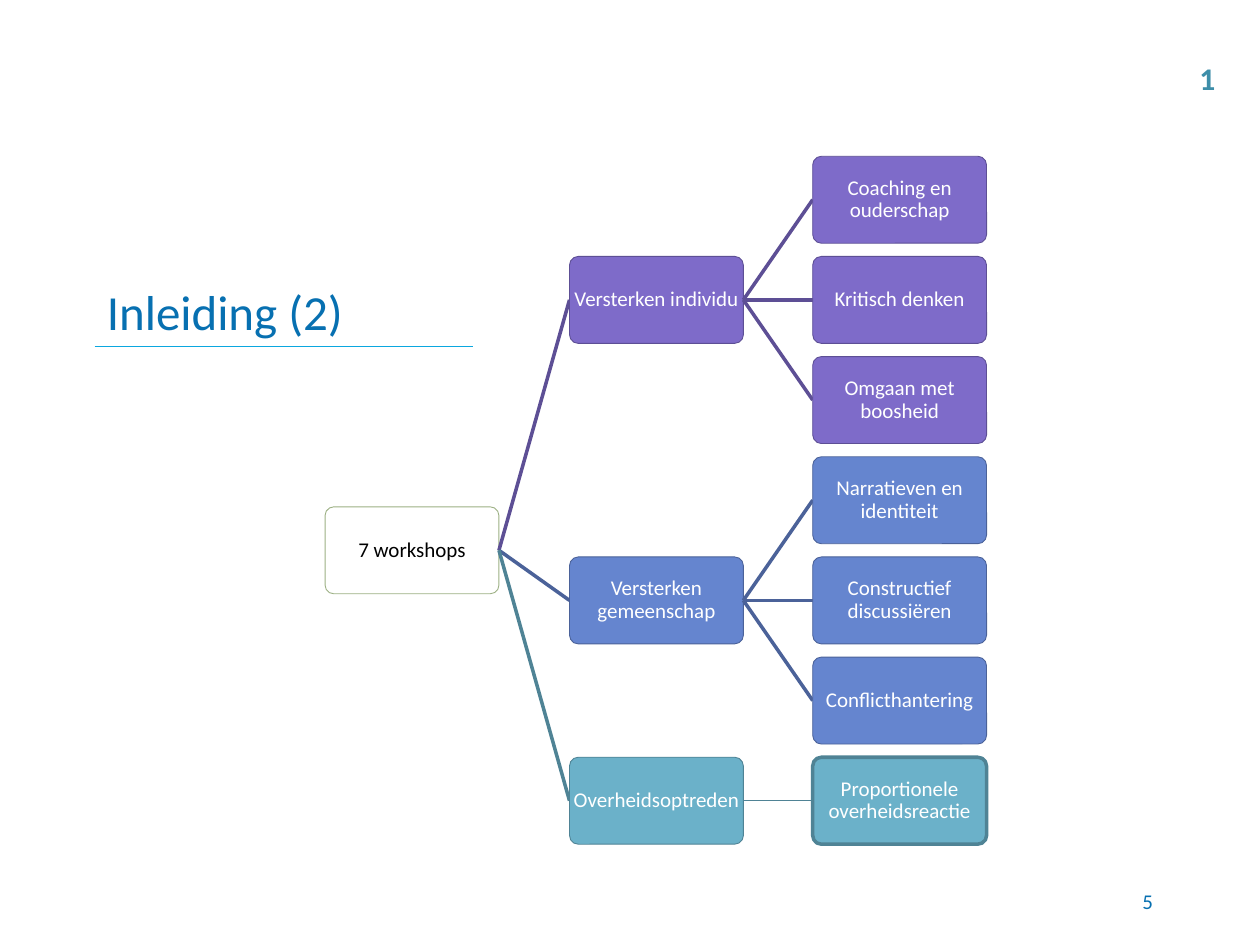
"""Build a slide with a three-level tree of the seven workshops."""
from pptx import Presentation
from pptx.dml.color import RGBColor
from pptx.enum.shapes import MSO_CONNECTOR as Connector, MSO_SHAPE as Shape
from pptx.enum.text import MSO_ANCHOR as Anchor, PP_ALIGN as Align
from pptx.oxml.ns import qn
from pptx.util import Inches, Pt
from lxml.etree import SubElement

WHITE = RGBColor(0xFF, 0xFF, 0xFF)
BLACK = RGBColor(0x00, 0x00, 0x00)
BLUE = RGBColor(0x07, 0x70, 0xB1)
SKY = RGBColor(0x0B, 0xA7, 0xDF)
TEAL = RGBColor(0x3E, 0x8E, 0xA9)
OLIVE = RGBColor(0x9C, 0xB0, 0x84)
PURPLE = RGBColor(0x7E, 0x6B, 0xC9)
PURPLE_DARK = RGBColor(0x5D, 0x4F, 0x95)
INDIGO = RGBColor(0x65, 0x85, 0xCF)
INDIGO_DARK = RGBColor(0x4B, 0x62, 0x99)
AQUA = RGBColor(0x6B, 0xB1, 0xC9)
AQUA_DARK = RGBColor(0x4F, 0x83, 0x95)

COLUMNS = (2.58, 4.52, 6.45)
FIRST_TOP, LAST_TOP, LAST_ROW = 1.24, 6.01, 6
NODE_WIDTH, NODE_HEIGHT = 1.38, 0.69
NODE_MARGIN = 0.01
THIN, THICK = 0.5, 2

BRANCHES = (
    ("Versterken individu", PURPLE, PURPLE_DARK,
     ("Coaching en ouderschap", "Kritisch denken", "Omgaan met boosheid")),
    ("Versterken gemeenschap", INDIGO, INDIGO_DARK,
     ("Narratieven en identiteit", "Constructief discussiëren", "Conflicthantering")),
    ("Overheidsoptreden", AQUA, AQUA_DARK, ("Proportionele overheidsreactie",)),
)


def apply_format(target, values):
    """Set each named attribute on the target."""
    for name, value in values.items():
        setattr(target, name, value)


def write_text(shape, text, color, font, frame, para=None):
    """Put one formatted paragraph in a shape."""
    apply_format(shape.text_frame, frame)
    paragraph = shape.text_frame.paragraphs[0]
    apply_format(paragraph, para or {})
    span = paragraph.add_run()
    span.text = text
    apply_format(span.font, {"name": "Calibri", **font})
    span.font.color.rgb = color


def add_label(page, place, text, color, font, frame, para=None):
    """Add a text box at left, top, width and height."""
    box = page.shapes.add_textbox(*map(Inches, place))
    write_text(box, text, color, font, frame, para)


def add_line(page, start, end, color, width):
    """Add a straight line without a shadow."""
    line = page.shapes.add_connector(Connector.STRAIGHT, *map(Inches, (*start, *end)))
    line.line.color.rgb = color
    line.line.width = Pt(width)
    SubElement(line._element.spPr, qn("a:effectLst"))


def row_top(row):
    """Return the top of a tree row, which may be fractional."""
    return FIRST_TOP + row * (LAST_TOP - FIRST_TOP) / LAST_ROW


def add_node(page, level, row, text, fill, outline, color=WHITE, width=THIN):
    """Add a rounded tree node with centred text."""
    place = (COLUMNS[level], row_top(row), NODE_WIDTH, NODE_HEIGHT)
    node = page.shapes.add_shape(Shape.ROUNDED_RECTANGLE, *map(Inches, place))
    node.adjustments[0] = 0.1
    node.shadow.inherit = False
    node.fill.solid()
    node.fill.fore_color.rgb = fill
    node.line.color.rgb = outline
    node.line.width = Pt(width)
    margins = {f"margin_{side}": Inches(NODE_MARGIN)
               for side in ("left", "top", "right", "bottom")}
    write_text(node, text, color, {"size": Pt(12)},
               {"word_wrap": True, "vertical_anchor": Anchor.MIDDLE, **margins},
               {"alignment": Align.CENTER, "line_spacing": 0.9})


def add_link(page, level, parent_row, child_row, color, width=THICK):
    """Join a parent node to a child node in the next column."""
    start = (COLUMNS[level] + NODE_WIDTH, row_top(parent_row) + NODE_HEIGHT / 2)
    end = (COLUMNS[level + 1], row_top(child_row) + NODE_HEIGHT / 2)
    add_line(page, start, end, color, width)


def add_tree(page):
    """Draw the workshops, their branches and the root."""
    branch_rows = []
    first = 0
    for *_, workshops in BRANCHES:
        branch_rows.append(first + (len(workshops) - 1) / 2)
        first += len(workshops)
    root_row = (branch_rows[0] + branch_rows[-1]) / 2
    add_node(page, 0, root_row, "7 workshops", WHITE, OLIVE, BLACK)
    row = 0
    for branch_row, (name, fill, outline, workshops) in zip(branch_rows, BRANCHES):
        add_link(page, 0, root_row, branch_row, outline)
        add_node(page, 1, branch_row, name, fill, outline)
        single = len(workshops) == 1
        for workshop in workshops:
            add_link(page, 1, branch_row, row, outline, THIN if single else THICK)
            add_node(page, 2, row, workshop, fill, outline, width=THICK if single else THIN)
            row += 1


def main():
    """Build and save the deck."""
    deck = Presentation()
    apply_format(deck, {"slide_width": Inches(10), "slide_height": Inches(7.5)})
    page = deck.slides.add_slide(deck.slide_layouts[6])
    add_line(page, (0.75, 2.75), (3.75, 2.75), SKY, 0.75)
    add_label(page, (0.75, 1.58, 3.04, 1.17), "Inleiding (2)", BLUE, {"size": Pt(28)},
              {"word_wrap": True, "vertical_anchor": Anchor.BOTTOM})
    add_label(page, (7.17, 6.95, 2.08, 0.4), "5", BLUE, {"size": Pt(12)},
              {"word_wrap": True, "vertical_anchor": Anchor.MIDDLE},
              {"alignment": Align.RIGHT})
    add_tree(page)
    add_label(page, (9.42, 0.42, 0.33, 0.4), "1", TEAL,
              {"size": Pt(18), "bold": True}, {"word_wrap": False})
    deck.save("out.pptx")


if __name__ == "__main__":
    main()
